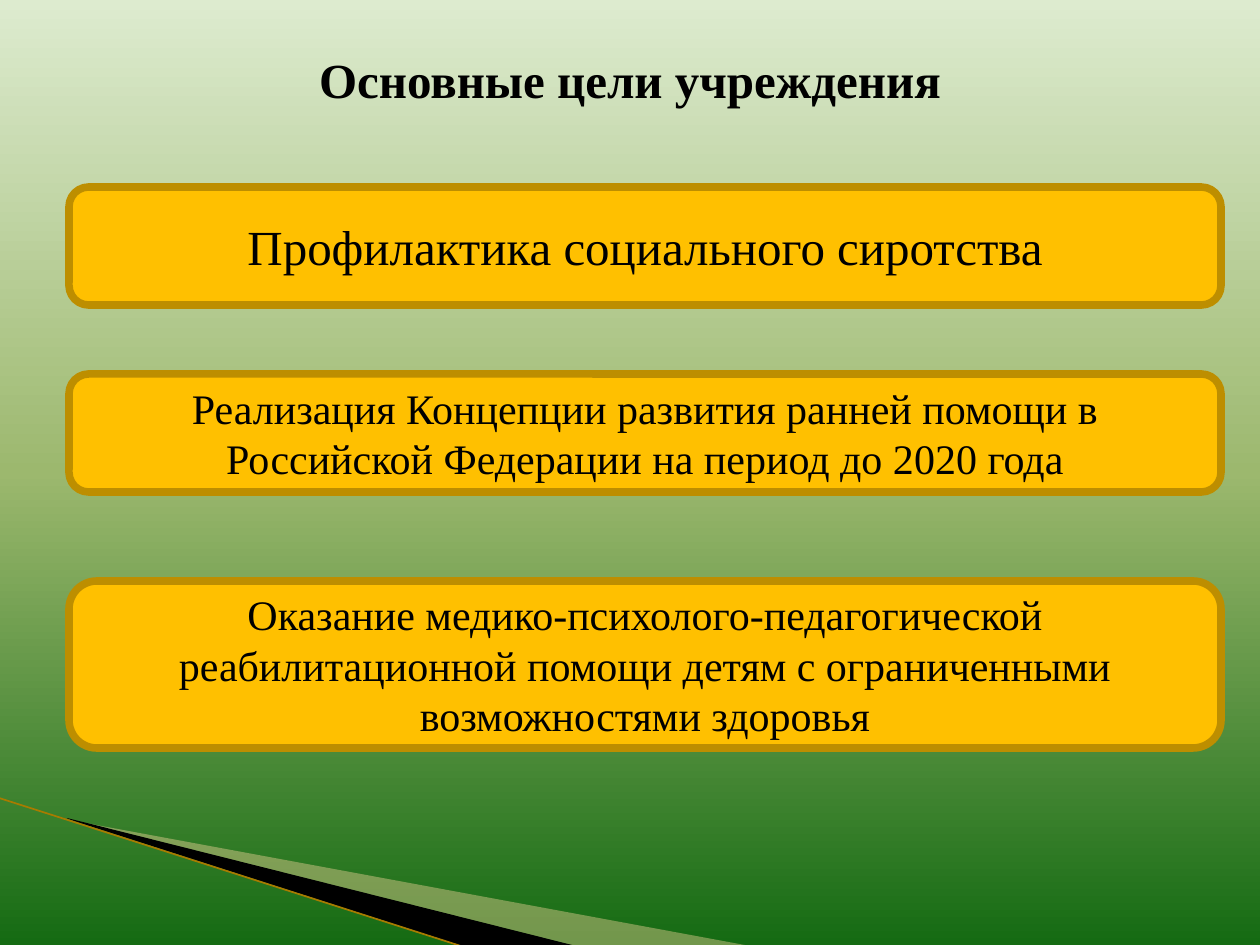
import copy

import pptx
import pptx.dml.color
import pptx.enum.shapes
import pptx.enum.text
import pptx.oxml.ns
import pptx.util
import lxml.etree

SCALE = 914400 / 126  # EMU per px
SLIDE_WIDTH, SLIDE_HEIGHT = 1260, 945
FONT = "Times New Roman"
COLORS = {
    "sky": "DDEBCF",
    "meadow": "9CB86E",
    "forest": "156B13",
    "text": "000000",
    "goal": "FFC000",
    "goal_border": "BD8E00",
    "wedge_light": "FFD9A2",
    "wedge_dark": "000000",
    "ray": "A87B00",
}


def px(value):
    return pptx.util.Emu(round(value * SCALE))


def color(name):
    return pptx.dml.color.RGBColor.from_string(COLORS[name])


def qualified(tag):
    return pptx.oxml.ns.qn(tag)


def write_text(shape, text, size, bold=False):
    frame = shape.text_frame
    frame.word_wrap = True
    frame.vertical_anchor = pptx.enum.text.MSO_ANCHOR.MIDDLE
    frame.text = text
    paragraph = frame.paragraphs[0]
    paragraph.alignment = pptx.enum.text.PP_ALIGN.CENTER
    font = paragraph.runs[0].font
    font.name = FONT
    font.size = pptx.util.Pt(size)
    font.bold = bold
    font.color.rgb = color("text")


def paint_background(slide):
    fill = slide.background.fill
    fill.gradient()
    fill.gradient_angle = 270
    stop_list = slide.element.find(".//" + qualified("a:gsLst"))
    stop_list.insert(1, copy.deepcopy(stop_list[0]))
    for stop, (position, name) in zip(
        fill.gradient_stops, [(0, "sky"), (0.5, "meadow"), (1, "forest")]
    ):
        stop.position = position
        stop.color.rgb = color(name)


def add_wedge(slide, left, top, points, color_name, opacity=100):
    corners = [(left + x, top + y) for x, y in points]
    builder = slide.shapes.build_freeform(*corners[0], scale=SCALE)
    builder.add_line_segments(corners[1:], close=True)
    wedge = builder.convert_to_shape()
    wedge.shadow.inherit = False
    wedge.fill.solid()
    wedge.fill.fore_color.rgb = color(color_name)
    wedge.line.fill.background()
    if opacity < 100:
        fill_color = wedge.element.spPr.find(".//" + qualified("a:srgbClr"))
        alpha = lxml.etree.SubElement(fill_color, qualified("a:alpha"))
        alpha.set("val", str(opacity * 1000))


def add_corner_rays(slide, left, top):
    # Two wedges fan out from a thin ray
    add_wedge(slide, left, top, [(69, 22), (750, 148), (575, 148), (69, 21)],
              "wedge_light", opacity=40)
    add_wedge(slide, left, top, [(67, 20), (576, 148), (469, 150), (68, 21)],
              "wedge_dark")
    ray = slide.shapes.add_connector(
        pptx.enum.shapes.MSO_CONNECTOR.STRAIGHT,
        px(left - 1), px(top), px(left + 467), px(top + 150),
    )
    ray.line.color.rgb = color("ray")
    ray.line.width = pptx.util.Pt(0.95)
    lxml.etree.SubElement(ray.element.spPr, qualified("a:effectLst"))


def add_title(slide, left, top, width, height, text):
    title = slide.shapes.add_textbox(px(left), px(top), px(width), px(height))
    write_text(title, text, 28, bold=True)


def add_goal(slide, left, top, width, height, text, size):
    goal = slide.shapes.add_shape(
        pptx.enum.shapes.MSO_SHAPE.ROUNDED_RECTANGLE,
        px(left), px(top), px(width), px(height),
    )
    goal.shadow.inherit = False
    goal.fill.solid()
    goal.fill.fore_color.rgb = color("goal")
    goal.line.color.rgb = color("goal_border")
    goal.line.width = pptx.util.Pt(4.33)
    write_text(goal, text, size)


def add_goals(slide, left, top, width):
    # Offset from the top of the region, height, text size, text
    goals = [
        (0, 118, 28, "Профилактика социального сиротства"),
        (187, 118, 24, "Реализация Концепции развития ранней помощи в "
                       "Российской Федерации на период до 2020 года"),
        (394, 167, 24, "Оказание медико-психолого-педагогической "
                       "реабилитационной помощи детям с ограниченными "
                       "возможностями здоровья"),
    ]
    for offset, height, size, text in goals:
        add_goal(slide, left, top + offset, width, height, text, size)


def main():
    presentation = pptx.Presentation()
    presentation.slide_width = px(SLIDE_WIDTH)
    presentation.slide_height = px(SLIDE_HEIGHT)
    slide = presentation.slides.add_slide(presentation.slide_layouts[6])

    paint_background(slide)
    add_corner_rays(slide, 0, 798)
    add_title(slide, 63, 38, 1134, 81, "Основные цели учреждения")
    add_goals(slide, 69, 187, 1152)

    presentation.save("out.pptx")


if __name__ == "__main__":
    main()
